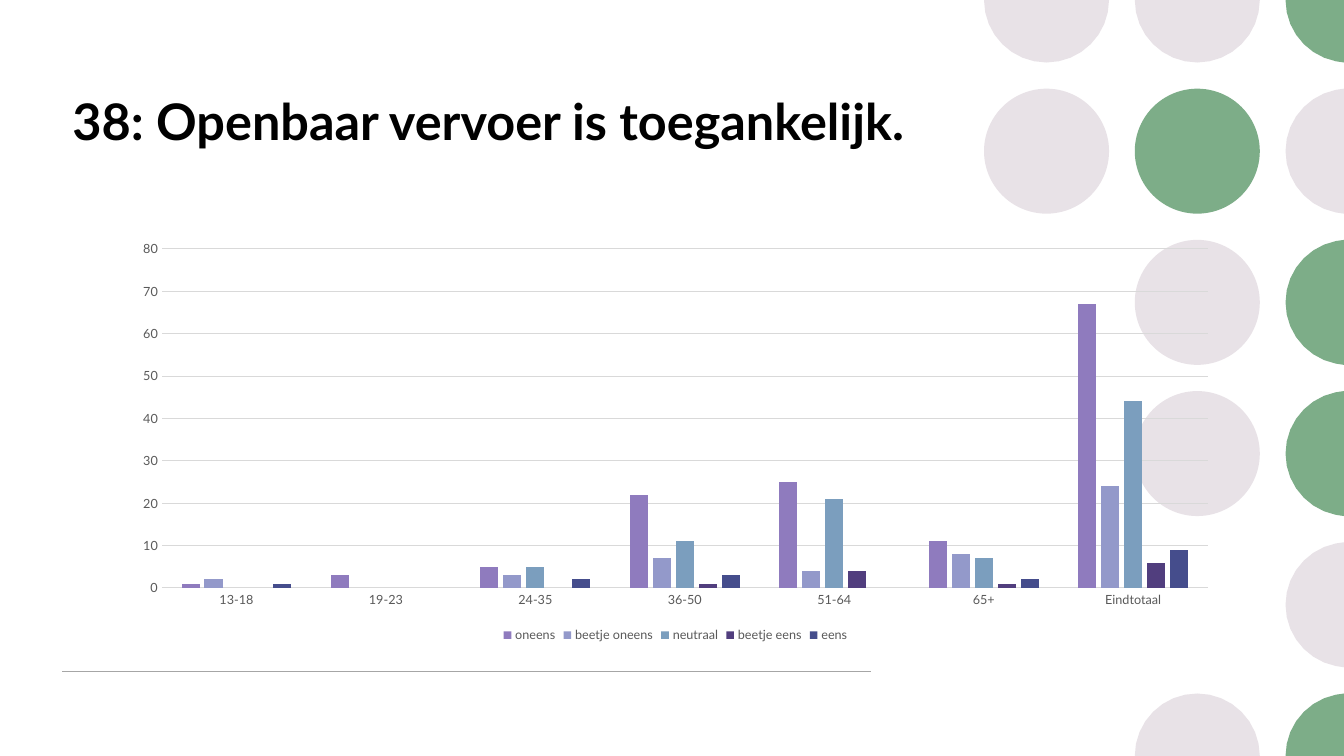
import math

import pptx
import pptx.chart.data
import pptx.dml.color
import pptx.enum.chart
import pptx.enum.shapes
import pptx.enum.text
import pptx.oxml.ns
import pptx.util
from lxml import etree

RGBColor = pptx.dml.color.RGBColor
Inches = pptx.util.Inches
Pt = pptx.util.Pt

TITLE = "38: Openbaar vervoer is toegankelijk."
CATEGORIES = ["13-18", "19-23", "24-35", "36-50", "51-64", "65+", "Eindtotaal"]
SERIES = [
    ("oneens", [1, 3, 5, 22, 25, 11, 67], RGBColor(0x8F, 0x7B, 0xBE)),
    ("beetje oneens", [2, None, 3, 7, 4, 8, 24], RGBColor(0x93, 0x99, 0xCA)),
    ("neutraal", [None, None, 5, 11, 21, 7, 44], RGBColor(0x7B, 0x9E, 0xBE)),
    ("beetje eens", [None, None, None, 1, 4, 1, 6], RGBColor(0x51, 0x3E, 0x7E)),
    ("eens", [1, None, 2, 3, None, 2, 9], RGBColor(0x45, 0x4D, 0x8C)),
]
DOT_ROWS = ["LLG", "LGL", ".LG", ".LG", "..L", ".LG"]
DOT_COLORS = {"L": RGBColor(0xE8, 0xE2, 0xE7), "G": RGBColor(0x7D, 0xAD, 0x88)}

BLACK = RGBColor(0, 0, 0)
LABEL_GRAY = RGBColor(0x59, 0x59, 0x59)
GRID_GRAY = RGBColor(0xD9, 0xD9, 0xD9)
RULE_GRAY = RGBColor(0xA6, 0xA6, 0xA6)
FONT = "Lato"

WIDTH, HEIGHT = 13.33, 7.5
ROW = HEIGHT / 5
COLUMN = 1.495
RADIUS = 0.62
FIRST_DOT = 10.38
MARGIN = 0.62
DOT_STEPS = 32
EDGE_TOLERANCE = 0.05


def apply_format(target, values):
    for name, value in values.items():
        setattr(target, name, value)


def style_font(font, size, color, bold=False):
    apply_format(font, {"name": FONT, "size": Pt(size), "bold": bold})
    font.color.rgb = color


def style_line(line, color, width):
    line.color.rgb = color
    line.width = Pt(width)


def clamp_to_slide(x, y):
    return min(max(x, 0), WIDTH), min(max(y, 0), HEIGHT)


def cut_dot_outline(center_x, center_y, outward_x, outward_y):
    start = math.atan2(outward_y, outward_x)
    outline = [clamp_to_slide(center_x, center_y)]
    for step in range(DOT_STEPS):
        angle = start + 2 * math.pi * step / DOT_STEPS
        point = (center_x + RADIUS * math.cos(angle), center_y + RADIUS * math.sin(angle))
        clamped = clamp_to_slide(*point)
        if math.dist(point, clamped) < EDGE_TOLERANCE:
            outline.append(clamped)
    return [(Inches(x), Inches(y)) for x, y in outline]


def add_dot(slide, center_x, center_y, color):
    outward_x = int(center_x >= WIDTH)
    outward_y = int(center_y >= HEIGHT) - int(center_y <= 0)
    if outward_x or outward_y:
        outline = cut_dot_outline(center_x, center_y, outward_x, outward_y)
        builder = slide.shapes.build_freeform(*outline[0])
        builder.add_line_segments(outline[1:], close=True)
        dot = builder.convert_to_shape()
    else:
        dot = slide.shapes.add_shape(
            pptx.enum.shapes.MSO_SHAPE.OVAL,
            Inches(center_x - RADIUS), Inches(center_y - RADIUS),
            Inches(2 * RADIUS), Inches(2 * RADIUS),
        )
    dot.shadow.inherit = False
    dot.fill.solid()
    dot.fill.fore_color.rgb = color
    dot.line.fill.background()


def add_rule(slide):
    height = Inches(6.66)
    rule = slide.shapes.add_connector(
        pptx.enum.shapes.MSO_CONNECTOR.STRAIGHT,
        Inches(MARGIN), height, Inches(8.64), height,
    )
    style_line(rule.line, RULE_GRAY, 1)
    etree.SubElement(rule._element.spPr, pptx.oxml.ns.qn("a:effectLst"))


def add_title(slide):
    box = slide.shapes.add_textbox(
        Inches(MARGIN), Inches(0.84), Inches(9.12), Inches(1.39)
    )
    frame = box.text_frame
    apply_format(frame, {
        "word_wrap": True,
        "vertical_anchor": pptx.enum.text.MSO_ANCHOR.TOP,
    })
    run = frame.paragraphs[0].add_run()
    run.text = TITLE
    style_font(run.font, 36, BLACK, True)


def add_answer_chart(slide):
    data = pptx.chart.data.CategoryChartData()
    data.categories = CATEGORIES
    for name, values, color in SERIES:
        data.add_series(name, values)
    chart = slide.shapes.add_chart(
        pptx.enum.chart.XL_CHART_TYPE.COLUMN_CLUSTERED,
        Inches(1.2), Inches(2.31), Inches(11), Inches(4.11), data,
    ).chart
    style_font(chart.font, 10, BLACK)
    apply_format(chart, {"has_title": False, "has_legend": True})
    apply_format(chart.legend, {
        "position": pptx.enum.chart.XL_LEGEND_POSITION.BOTTOM,
        "include_in_layout": False,
    })
    style_font(chart.legend.font, 9, LABEL_GRAY)

    plot = chart.plots[0]
    apply_format(plot, {"gap_width": 219, "overlap": -27, "vary_by_categories": False})
    for series, (name, values, color) in zip(plot.series, SERIES):
        series.invert_if_negative = False
        series.format.fill.solid()
        series.format.fill.fore_color.rgb = color

    no_tick = pptx.enum.chart.XL_TICK_MARK.NONE
    for axis in (chart.category_axis, chart.value_axis):
        apply_format(axis, {"major_tick_mark": no_tick, "minor_tick_mark": no_tick})
        style_font(axis.tick_labels.font, 9, LABEL_GRAY)
    style_line(chart.category_axis.format.line, GRID_GRAY, 0.75)
    apply_format(chart.value_axis, {
        "minimum_scale": 0,
        "maximum_scale": 80,
        "major_unit": 10,
        "has_major_gridlines": True,
    })
    chart.value_axis.format.line.fill.background()
    style_line(chart.value_axis.major_gridlines.format.line, GRID_GRAY, 0.75)


def main():
    presentation = pptx.Presentation()
    apply_format(presentation, {
        "slide_width": Inches(WIDTH),
        "slide_height": Inches(HEIGHT),
    })
    slide = presentation.slides.add_slide(presentation.slide_layouts[6])
    for row, letters in enumerate(DOT_ROWS):
        for column, letter in enumerate(letters):
            if letter in DOT_COLORS:
                add_dot(slide, FIRST_DOT + column * COLUMN, row * ROW, DOT_COLORS[letter])
    add_rule(slide)
    add_title(slide)
    add_answer_chart(slide)
    presentation.save("out.pptx")


if __name__ == "__main__":
    main()
